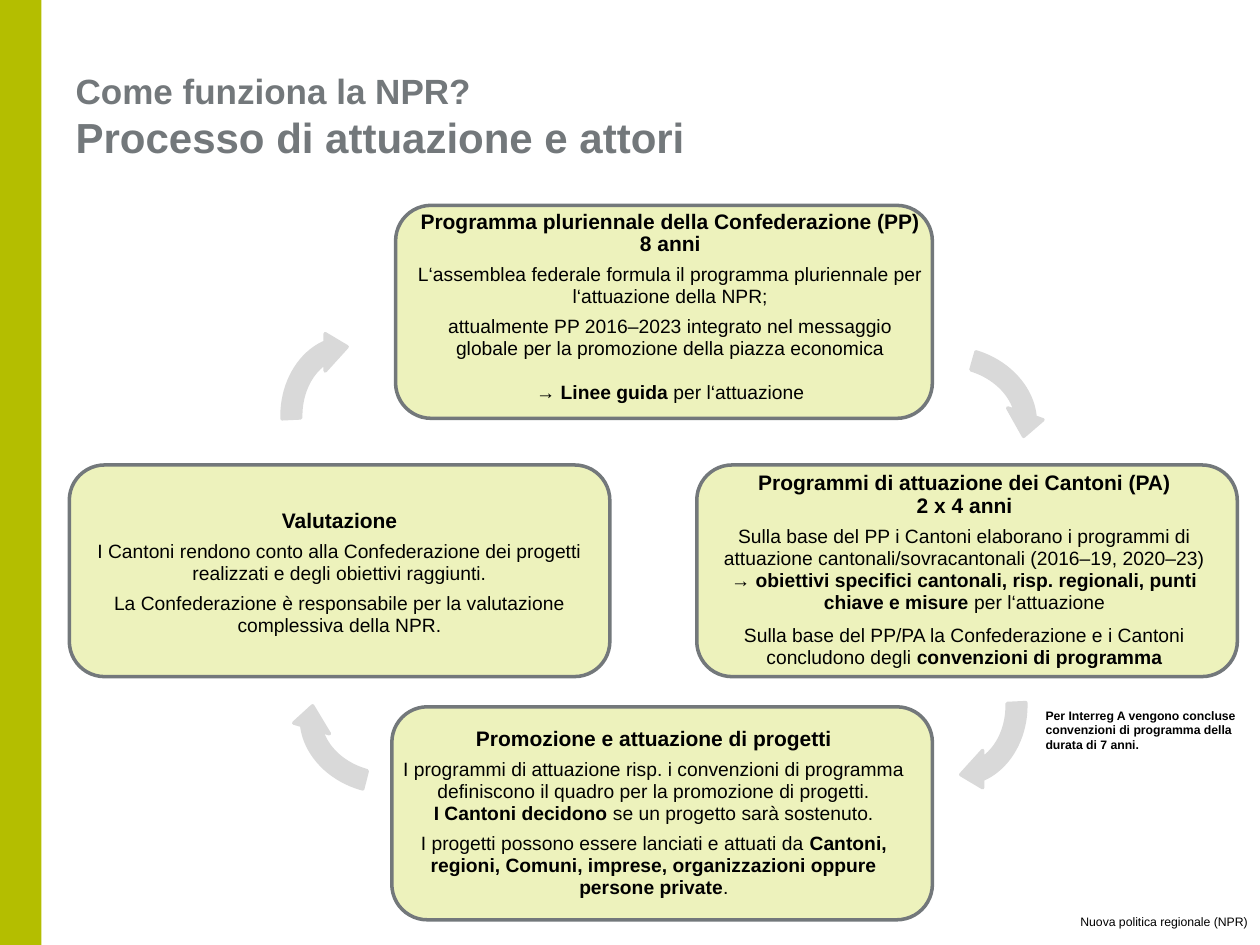
from lxml.etree import SubElement
from pptx import Presentation
from pptx.dml.color import RGBColor
from pptx.enum.shapes import MSO_SHAPE
from pptx.enum.text import MSO_ANCHOR, PP_ALIGN
from pptx.oxml.ns import qn
from pptx.util import Inches, Pt

LIME = RGBColor(0xB4, 0xBE, 0x00)
PALE = RGBColor(0xED, 0xF2, 0xBC)
GREY = RGBColor(0x73, 0x78, 0x7B)
SILVER = RGBColor(0xD9, 0xD9, 0xD9)
BLACK = RGBColor(0, 0, 0)
FONT = "Arial"

# Each stage: card place, text place, anchor, heading, body.
# A body item is text (bold between asterisks) and the space after it.
STAGES = [
    ((0.55, 3.69, 4.29, 1.68), (0.55, 3.73, 4.29, 1.64), MSO_ANCHOR.MIDDLE,
     "Valutazione",
     [("I Cantoni rendono conto alla Confederazione dei progetti realizzati "
       "e degli obiettivi raggiunti.", 4.5),
      ("La Confederazione è responsabile per la valutazione complessiva "
       "della NPR.", 4.5)]),
    ((3.14, 1.63, 4.26, 1.69), (3.24, 1.66, 4.16, 1.56), MSO_ANCHOR.MIDDLE,
     "Programma pluriennale della Confederazione (PP)\n8 anni",
     [("L‘assemblea federale formula il programma pluriennale per "
       "l‘attuazione della NPR;", 4.5),
      ("attualmente PP 2016–2023 integrato nel messaggio globale per la "
       "promozione della piazza economica", 12.5),
      ("→ *Linee guida* per l‘attuazione", 4.5)]),
    ((5.53, 3.69, 4.29, 1.68), (5.53, 3.7, 4.25, 1.65), MSO_ANCHOR.TOP,
     "Programmi di attuazione dei Cantoni (PA)\n2 x 4 anni",
     [("Sulla base del PP i Cantoni elaborano i programmi di attuazione "
       "cantonali/sovracantonali (2016–19, 2020–23)\n"
       "*→ obiettivi specifici cantonali, risp. regionali, punti chiave e "
       "misure* per l‘attuazione", 6.5),
      ("Sulla base del PP/PA la Confederazione e i Cantoni concludono degli "
       "*convenzioni di programma*", 4.5)]),
    ((3.11, 5.61, 4.29, 1.69), (3.11, 5.61, 4.16, 1.69), MSO_ANCHOR.MIDDLE,
     "Promozione e attuazione di progetti",
     [("I programmi di attuazione risp. i convenzioni di programma "
       "definiscono il quadro per la promozione di progetti.\n"
       "*I Cantoni decidono* se un progetto sarà sostenuto.", 4.5),
      ("I progetti possono essere lanciati e attuati da *Cantoni, regioni, "
       "Comuni, imprese, organizzazioni oppure persone private*.", 4.5)]),
]

# Left, top and turn of each cycle arrow
ARROWS = [(2.31, 5.17, 196.8), (6.93, 5.01, 90), (6.91, 2.7, 18.5),
          (2.06, 2.71, 270)]


def write(para, text, size=11, bold=False, color=BLACK, align=PP_ALIGN.LEFT,
          line=None, after=0):
    """Fill a paragraph; asterisks switch bold, newlines break the line."""
    para.alignment = align
    para.line_spacing = line
    para.space_before, para.space_after = Pt(0), Pt(after)
    for i, part in enumerate(text.split("*")):
        for j, piece in enumerate(part.split("\n")):
            if j:
                para.add_line_break()
                mark = SubElement(para._p[-1], qn("a:rPr"))
                mark.set("sz", str(size * 100))
            if piece:
                run = para.add_run()
                run.text = piece
                font = run.font
                font.name, font.size = FONT, Pt(size)
                font.bold = bold or i % 2 == 1
                font.color.rgb = color


def add_box(slide, place, anchor=MSO_ANCHOR.TOP, inset=None):
    frame = slide.shapes.add_textbox(*map(Inches, place)).text_frame
    frame.word_wrap = True
    frame.vertical_anchor = anchor
    if inset is not None:
        frame.margin_left = frame.margin_right = Inches(inset)
        frame.margin_top = frame.margin_bottom = Inches(inset)
    return frame


def add_form(slide, kind, place, fill, edge=None):
    shape = slide.shapes.add_shape(kind, *map(Inches, place))
    shape.shadow.inherit = False
    shape.fill.solid()
    shape.fill.fore_color.rgb = fill
    if edge is None:
        shape.line.fill.background()
    else:
        shape.line.color.rgb = edge
        shape.line.width = Pt(2)
    return shape


def add_stage(slide, card, place, anchor, head, body):
    add_form(slide, MSO_SHAPE.ROUNDED_RECTANGLE, card, PALE, GREY)
    frame = add_box(slide, place, anchor, inset=0.05)
    write(frame.paragraphs[0], head, size=12, bold=True,
          align=PP_ALIGN.CENTER, line=0.9, after=4.5)
    for text, after in body:
        write(frame.add_paragraph(), text, align=PP_ALIGN.CENTER, line=0.95,
              after=after)


def add_arrow(slide, left, top, turn):
    arrow = add_form(slide, MSO_SHAPE.CIRCULAR_ARROW, (left, top, 1.39, 1.18),
                     SILVER, SILVER)
    for i, value in enumerate((0.125, 11.42, 204.58, 160.43, 0.125)):
        arrow.adjustments[i] = value
    arrow.rotation = turn


def set_title(slide):
    title = slide.shapes.title
    title.left, title.top = Inches(0.5), Inches(0.6)
    title.width, title.height = Inches(9.27), Inches(0.63)
    frame = title.text_frame
    frame.vertical_anchor = MSO_ANCHOR.MIDDLE
    write(frame.paragraphs[0], "Come funziona la NPR?", size=20, bold=True,
          color=GREY)
    write(frame.add_paragraph(), "Processo di attuazione e attori", size=24,
          bold=True, color=GREY)


def main():
    deck = Presentation()
    deck.slide_width, deck.slide_height = Inches(10), Inches(7.5)
    slide = deck.slides.add_slide(deck.slide_layouts[5])

    # Side band and title
    add_form(slide, MSO_SHAPE.RECTANGLE, (0, 0, 0.33, 7.5), LIME)
    set_title(slide)

    # Cycle of stages
    for stage in STAGES:
        add_stage(slide, *stage)
    for arrow in ARROWS:
        add_arrow(slide, *arrow)

    # Footer and side note
    foot = add_box(slide, (8.15, 7.21, 1.85, 0.29))
    write(foot.paragraphs[0], "Nuova politica regionale (NPR)", size=7,
          align=PP_ALIGN.RIGHT)
    note = add_box(slide, (8.2, 5.57, 1.75, 0.45))
    write(note.paragraphs[0], "Per Interreg A vengono concluse convenzioni "
          "di programma della durata di 7 anni.", size=7, bold=True)

    deck.save("out.pptx")


if __name__ == "__main__":
    main()
